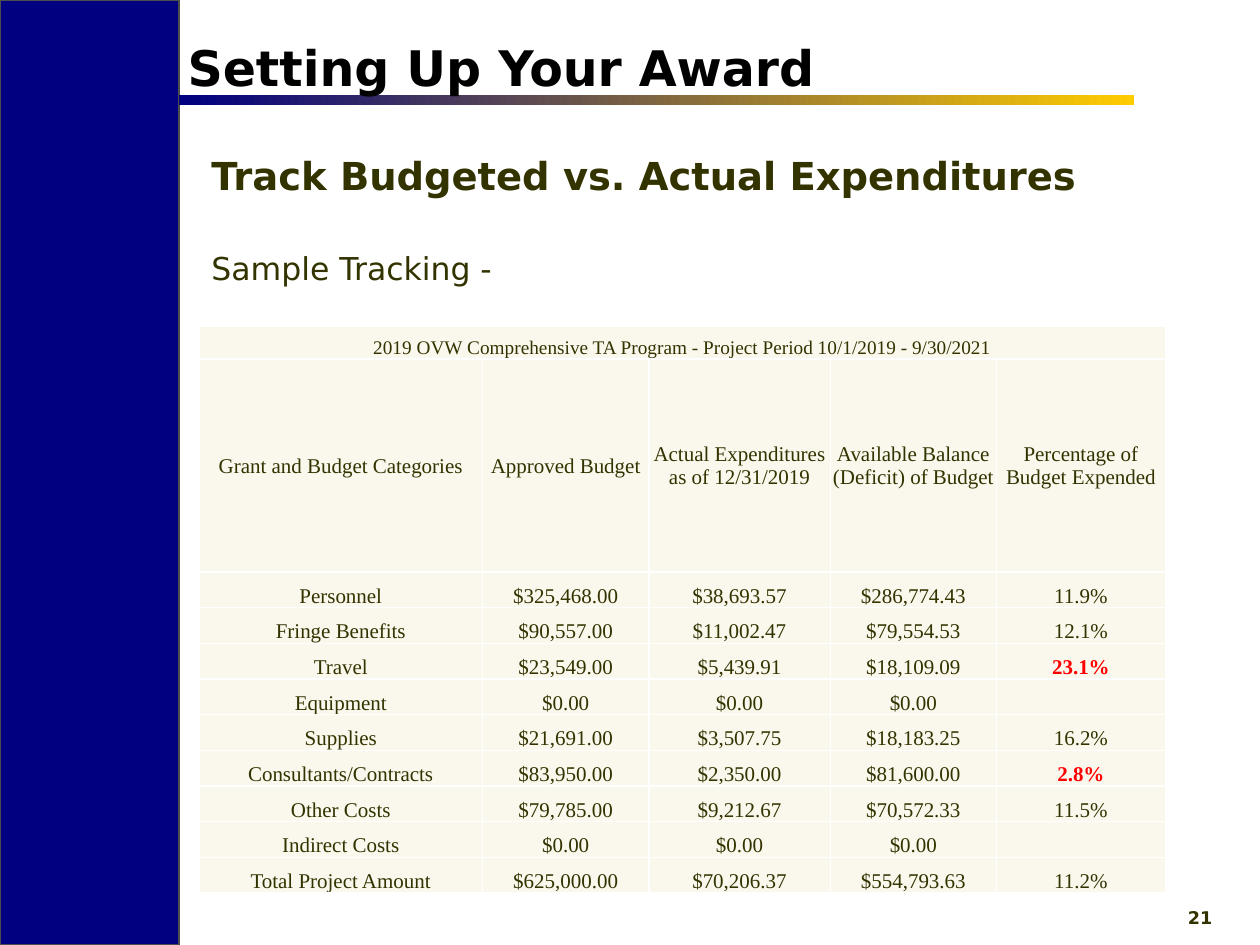
from pptx import Presentation
from pptx import util as u
from pptx.dml import color
from pptx.enum import shapes, text
from pptx.oxml.xmlchemy import OxmlElement

SANS, SERIF = "DejaVu Sans", "Times New Roman"
NAVY, GOLD, OLIVE = "000080", "FFCC00", "333300"
RED, CREAM, WHITE, BLACK = "FF0000", "FAF7ED", "FFFFFF", "000000"

COLUMN_WIDTHS = [2.25, 1.32, 1.44, 1.32, 1.34]
CAPTION = "2019 OVW Comprehensive TA Program - Project Period 10/1/2019 - 9/30/2021"
HEADINGS = [
    "Grant and Budget Categories",
    "Approved Budget",
    "Actual Expenditures as of 12/31/2019",
    "Available Balance (Deficit) of Budget",
    "Percentage of Budget Expended",
]
BUDGET = [
    ["Personnel", "$325,468.00", "$38,693.57", "$286,774.43", "11.9%"],
    ["Fringe Benefits", "$90,557.00", "$11,002.47", "$79,554.53", "12.1%"],
    ["Travel", "$23,549.00", "$5,439.91", "$18,109.09", "23.1%"],
    ["Equipment", "$0.00", "$0.00", "$0.00", ""],
    ["Supplies", "$21,691.00", "$3,507.75", "$18,183.25", "16.2%"],
    ["Consultants/Contracts", "$83,950.00", "$2,350.00", "$81,600.00", "2.8%"],
    ["Other Costs", "$79,785.00", "$9,212.67", "$70,572.33", "11.5%"],
    ["Indirect Costs", "$0.00", "$0.00", "$0.00", ""],
    ["Total Project Amount", "$625,000.00", "$70,206.37", "$554,793.63", "11.2%"],
]
FLAGGED = {"23.1%", "2.8%"}


def rgb(value):
    return color.RGBColor.from_string(value)


def apply(target, formats):
    for name, value in formats.items():
        setattr(target, name, value)


def write(para, words, size, face, ink, bold=False):
    span = para.add_run()
    span.text = words
    apply(span.font, {"size": u.Pt(size), "name": face, "bold": bold})
    span.font.color.rgb = rgb(ink)


def add_box(page, bounds):
    box = page.shapes.add_textbox(*map(u.Inches, bounds))
    apply(box.text_frame, {"word_wrap": True, "vertical_anchor": text.MSO_ANCHOR.TOP})
    return box.text_frame


def add_bar(page, bounds):
    bar = page.shapes.add_shape(shapes.MSO_SHAPE.RECTANGLE, *map(u.Inches, bounds))
    bar.shadow.inherit = False
    return bar


def add_sidebar(page, left, top, width, height):
    panel = add_bar(page, (left, top, width, height))
    panel.fill.solid()
    panel.fill.fore_color.rgb = rgb(NAVY)
    panel.line.color.rgb = rgb("4D4D4D")
    panel.line.width = u.Pt(1)


def add_header(page, left, top, width, height):
    rule = add_bar(page, (left, top + height - 0.08, width, 0.08))
    rule.line.fill.background()
    rule.fill.gradient()
    rule.fill.gradient_angle = 0
    for stop, ink, position in zip(rule.fill.gradient_stops, (NAVY, GOLD), (0, 1)):
        stop.color.rgb = rgb(ink)
        stop.position = position
    title = add_box(page, (left - 0.03, top, width, height - 0.05))
    write(title.paragraphs[0], "Setting Up Your Award", 28, SANS, BLACK, True)


def add_body(page, left, top, width, height):
    body = add_box(page, (left, top, width, height))
    write(body.paragraphs[0], "Track Budgeted vs. Actual Expenditures", 22, SANS, OLIVE, True)
    para = body.add_paragraph()
    para.space_before = u.Pt(29)
    write(para, "Sample Tracking -", 18, SANS, OLIVE)


def add_borders(cell):
    properties = cell._tc.get_or_add_tcPr()
    for position, side in enumerate(("a:lnL", "a:lnR", "a:lnT", "a:lnB")):
        line = OxmlElement(side)
        line.set("w", str(u.Pt(1)))
        fill = OxmlElement("a:solidFill")
        ink = OxmlElement("a:srgbClr")
        ink.set("val", WHITE)
        fill.append(ink)
        line.append(fill)
        properties.insert(position, line)


def fill_cell(cell, words, size, anchor):
    apply(cell, {
        "margin_left": u.Inches(0.01),
        "margin_right": u.Inches(0.01),
        "margin_top": u.Inches(0.01),
        "margin_bottom": 0,
        "vertical_anchor": anchor,
    })
    cell.fill.solid()
    cell.fill.fore_color.rgb = rgb(CREAM)
    add_borders(cell)
    para = cell.text_frame.paragraphs[0]
    para.alignment = text.PP_ALIGN.CENTER
    if words:
        flagged = words in FLAGGED
        write(para, words, size, SERIF, RED if flagged else OLIVE, flagged)
    else:
        ending = OxmlElement("a:endParaRPr")
        ending.set("sz", str(size * 100))
        para._p.append(ending)


def add_budget(page, left, top, width, height):
    rows = [[CAPTION] + [""] * 4, HEADINGS] + BUDGET
    bounds = map(u.Inches, (left, top, width, height))
    table = page.shapes.add_table(len(rows), len(COLUMN_WIDTHS), *bounds).table
    apply(table, {"first_row": False, "horz_banding": False})
    for column, size in zip(table.columns, COLUMN_WIDTHS):
        column.width = u.Inches(size)
    caption_height, heading_height = 0.26, 1.69
    item_height = (height - caption_height - heading_height) / len(BUDGET)
    heights = [caption_height, heading_height] + [item_height] * len(BUDGET)
    for index, (row, size, values) in enumerate(zip(table.rows, heights, rows)):
        row.height = u.Inches(size)
        anchor = text.MSO_ANCHOR.MIDDLE if index == 1 else text.MSO_ANCHOR.BOTTOM
        for cell, words in zip(row.cells, values):
            fill_cell(cell, words, 11 if index == 0 else 12, anchor)
    table.cell(0, 0).merge(table.cell(0, len(COLUMN_WIDTHS) - 1))


def add_page_number(page, left, top, width, height):
    number = add_box(page, (left, top, width, height))
    write(number.paragraphs[0], "21", 10, SANS, OLIVE, True)


def main():
    deck = Presentation()
    apply(deck, {"slide_width": u.Inches(10), "slide_height": u.Inches(7.5)})
    page = deck.slides.add_slide(deck.slide_layouts[6])
    add_sidebar(page, 0, 0, 1.42, 7.5)
    add_header(page, 1.42, 0.25, 7.58, 0.58)
    add_page_number(page, 9.33, 7.15, 0.5, 0.27)
    add_body(page, 1.58, 1.16, 7.92, 1.3)
    add_budget(page, 1.58, 2.59, 7.67, 4.5)
    deck.save("out.pptx")


if __name__ == "__main__":
    main()
